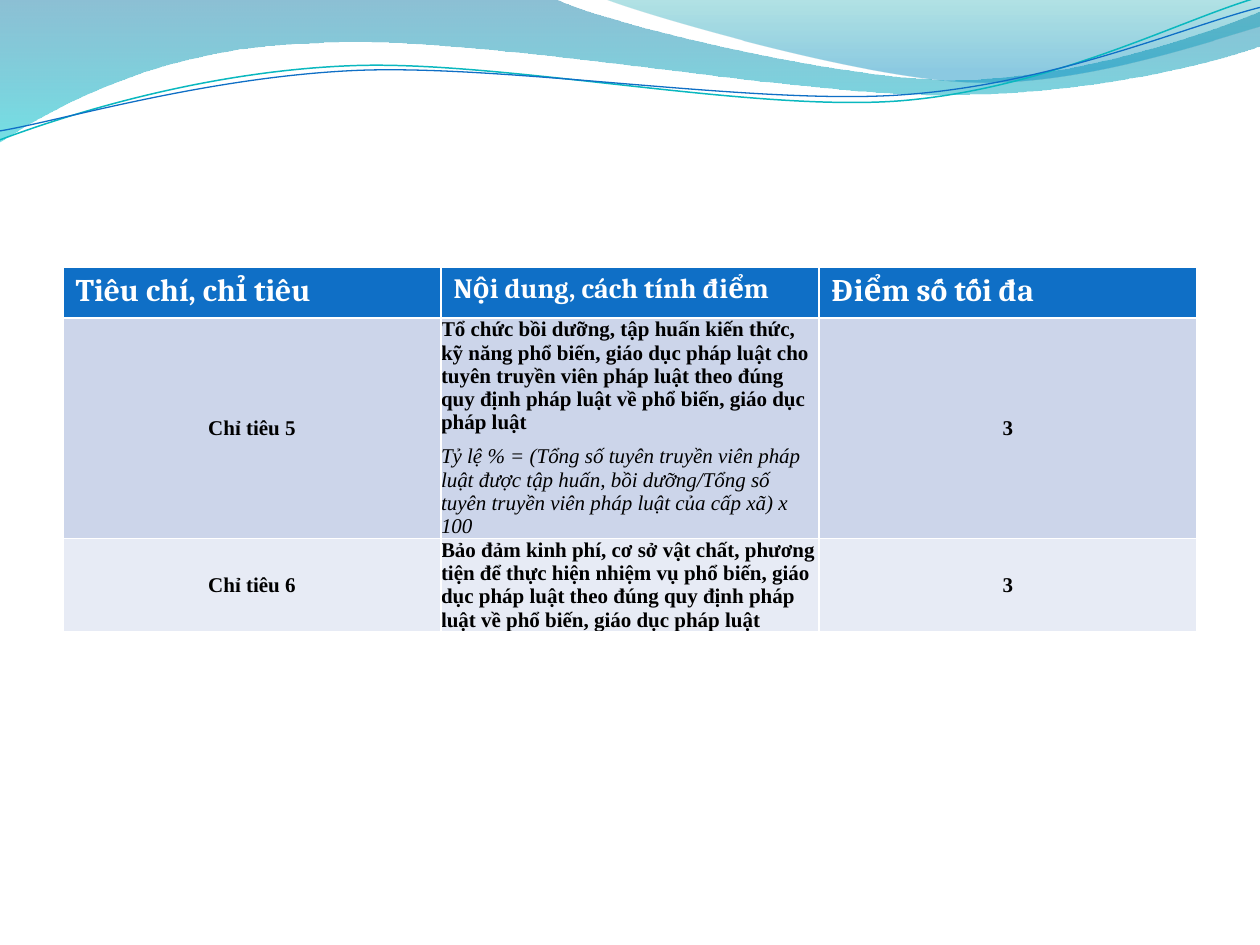
from dataclasses import dataclass

from lxml import etree
from pptx import Presentation
from pptx import util as u
from pptx.dml.color import RGBColor
from pptx.enum import text
from pptx.oxml import ns


@dataclass(frozen=True)
class Theme:
    white: str = "FFFFFF"
    black: str = "000000"
    blue: str = "0F6FC6"
    teal: str = "0AB8BF"
    bands: tuple = ("CCD5EA", "E7EBF5")
    band_wave: tuple = ((0, "0074A1", 45), (1, "00C6CF", 55))
    crest_wave: tuple = ((0, "00A1A9", 30), (0.8, "008BBF", 45))
    header_font: str = "Cambria"
    body_font: str = "Times New Roman"
    header_sizes: tuple = (18, 16, 18)
    body_size: int = 12


THEME = Theme()

BAND = [(0, 0), [(11.18, -0.03)],
        [(12.09, 0.43), (16.87, 1.6), (19.25, 1.6)],
        [(21.67, 1.6), (24.33, 0.66), (25.4, 0.23)],
        [(25.43, 0.91)],
        [(24.97, 1.12), (22.1, 1.93), (18.95, 1.91)],
        [(15.8, 1.91), (9.7, 0.71), (6.53, 0.86)],
        [(3.28, 0.91), (1.17, 2.11), (-0.03, 2.87)]]
CREST = [(12.17, -0.03),
         [(12.93, 0.28), (17.32, 1.57), (19.53, 1.65)],
         [(21.74, 1.75), (24.41, 0.81), (25.4, 0.53)],
         [(25.4, 0)]]
TEAL_LINE = [(-0.05, 2.22),
             [(1.19, 1.82), (4.02, 1.04), (7.05, 1.06)],
             [(10.05, 1.07), (15.02, 2.37), (18.08, 2.29)],
             [(21.13, 2.2), (23.87, 0.91), (25.41, 0.55)]]
BLUE_LINE = [(-0.04, 2.04),
             [(1.16, 1.9), (4.18, 1.15), (7.2, 1.16)],
             [(10.25, 1.18), (15.24, 2.25), (18.18, 2.17)],
             [(21.21, 2.1), (23.93, 1.06), (25.45, 0.75)]]

HEADINGS = ["Tiêu chí, chỉ tiêu", "Nội dung, cách tính điểm", "Điểm số tối đa"]
CRITERIA = [
    ("Chỉ tiêu 5",
     "Tổ chức bồi dưỡng, tập huấn kiến thức, kỹ năng phổ biến, giáo dục pháp luật "
     "cho tuyên truyền viên pháp luật theo đúng quy định pháp luật về phổ biến, "
     "giáo dục pháp luật",
     "Tỷ lệ % = (Tổng số tuyên truyền viên pháp luật được tập huấn, bồi dưỡng/"
     "Tổng số tuyên truyền viên pháp luật của cấp xã) x 100",
     "3"),
    ("Chỉ tiêu 6",
     "Bảo đảm kinh phí, cơ sở vật chất, phương tiện để thực hiện nhiệm vụ phổ biến, "
     "giáo dục pháp luật theo đúng quy định pháp luật về phổ biến, giáo dục pháp luật",
     None,
     "3"),
]


def apply(target, values):
    for name, value in values.items():
        setattr(target, name, value)


def bend(wave, segments):
    lines = list(wave.element.iter(ns.qn("a:lnTo")))
    for segment in segments:
        corners, lines = lines[:len(segment)], lines[len(segment):]
        if len(segment) == 3:
            curve = etree.Element(ns.qn("a:cubicBezTo"))
            corners[0].addprevious(curve)
            for corner in corners:
                curve.append(corner[0])
                corner.getparent().remove(corner)


def add_outline(parts, outline, close):
    start, *segments = outline
    builder = parts.build_freeform(*map(u.Cm, start))
    builder.add_line_segments([(u.Cm(x), u.Cm(y)) for segment in segments
                               for x, y in segment], close=close)
    wave = builder.convert_to_shape()
    wave.shadow.inherit = False
    bend(wave, segments)
    return wave


def add_wave(parts, outline, stops):
    wave = add_outline(parts, outline, True)
    wave.line.fill.background()
    wave.fill.gradient()
    wave.fill.gradient_angle = 270
    for stop, (position, color, _) in zip(wave.fill.gradient_stops, stops):
        stop.position = position
        stop.color.rgb = RGBColor.from_string(color)
    tints = wave.element.spPr.iter(ns.qn("a:srgbClr"))
    for tint, (_, _, opacity) in zip(tints, stops):
        etree.SubElement(tint, ns.qn("a:alpha"), val=str(opacity * 1000))


def add_wave_line(parts, outline, color, width):
    wave = add_outline(parts, outline, False)
    wave.rotation = 357.3
    wave.fill.background()
    wave.line.color.rgb = RGBColor.from_string(color)
    wave.line.width = u.Pt(width)


def write(paragraph, words, color, **font):
    run = paragraph.add_run()
    run.text = words
    run.font.color.rgb = RGBColor.from_string(color)
    apply(run.font, font)


def paint(cell, color):
    cell.fill.solid()
    cell.fill.fore_color.rgb = RGBColor.from_string(color)


def fill_heading(cell, words, size):
    paint(cell, THEME.blue)
    write(cell.text_frame.paragraphs[0], words, THEME.white,
          name=THEME.header_font, size=u.Pt(size), bold=True)


def fill_body(cell, words, color, centered=True, formula=None):
    paint(cell, color)
    apply(cell, {"vertical_anchor": text.MSO_ANCHOR.MIDDLE, "margin_left": 0,
                 "margin_right": 0, "margin_top": 0, "margin_bottom": 0})
    frame = cell.text_frame
    for index, line in enumerate(filter(None, (words, formula))):
        paragraph = frame.add_paragraph() if index else frame.paragraphs[0]
        paragraph.space_before = u.Pt(6)
        if centered:
            paragraph.alignment = text.PP_ALIGN.CENTER
        write(paragraph, line, THEME.black, name=THEME.body_font,
              size=u.Pt(THEME.body_size), bold=index == 0, italic=index == 1)


def add_criteria_table(slide):
    criteria = slide.shapes.add_table(len(CRITERIA) + 1, len(HEADINGS), u.Cm(1.27),
                                      u.Cm(5.38), u.Cm(22.86), u.Cm(7.85))
    table = criteria.table
    for row in table.rows:
        row.height = u.Cm(1.03)
    criteria.height = u.Cm(7.85)
    for column, (heading, size) in enumerate(zip(HEADINGS, THEME.header_sizes)):
        fill_heading(table.cell(0, column), heading, size)
    for row, (label, content, formula, score) in enumerate(CRITERIA, 1):
        color = THEME.bands[(row - 1) % 2]
        fill_body(table.cell(row, 0), label, color)
        fill_body(table.cell(row, 1), content, color, False, formula)
        fill_body(table.cell(row, 2), score, color)


def main():
    deck = Presentation()
    apply(deck, {"slide_width": u.Cm(25.4), "slide_height": u.Cm(19.05)})
    slide = deck.slides.add_slide(deck.slide_layouts.get_by_name("Blank"))
    add_wave(slide.shapes, BAND, THEME.band_wave)
    add_wave(slide.shapes, CREST, THEME.crest_wave)
    wave_lines = slide.shapes.add_group_shape().shapes
    add_wave_line(wave_lines, TEAL_LINE, THEME.teal, 0.85)
    add_wave_line(wave_lines, BLUE_LINE, THEME.blue, 0.75)
    add_criteria_table(slide)
    deck.save("out.pptx")


if __name__ == "__main__":
    main()
